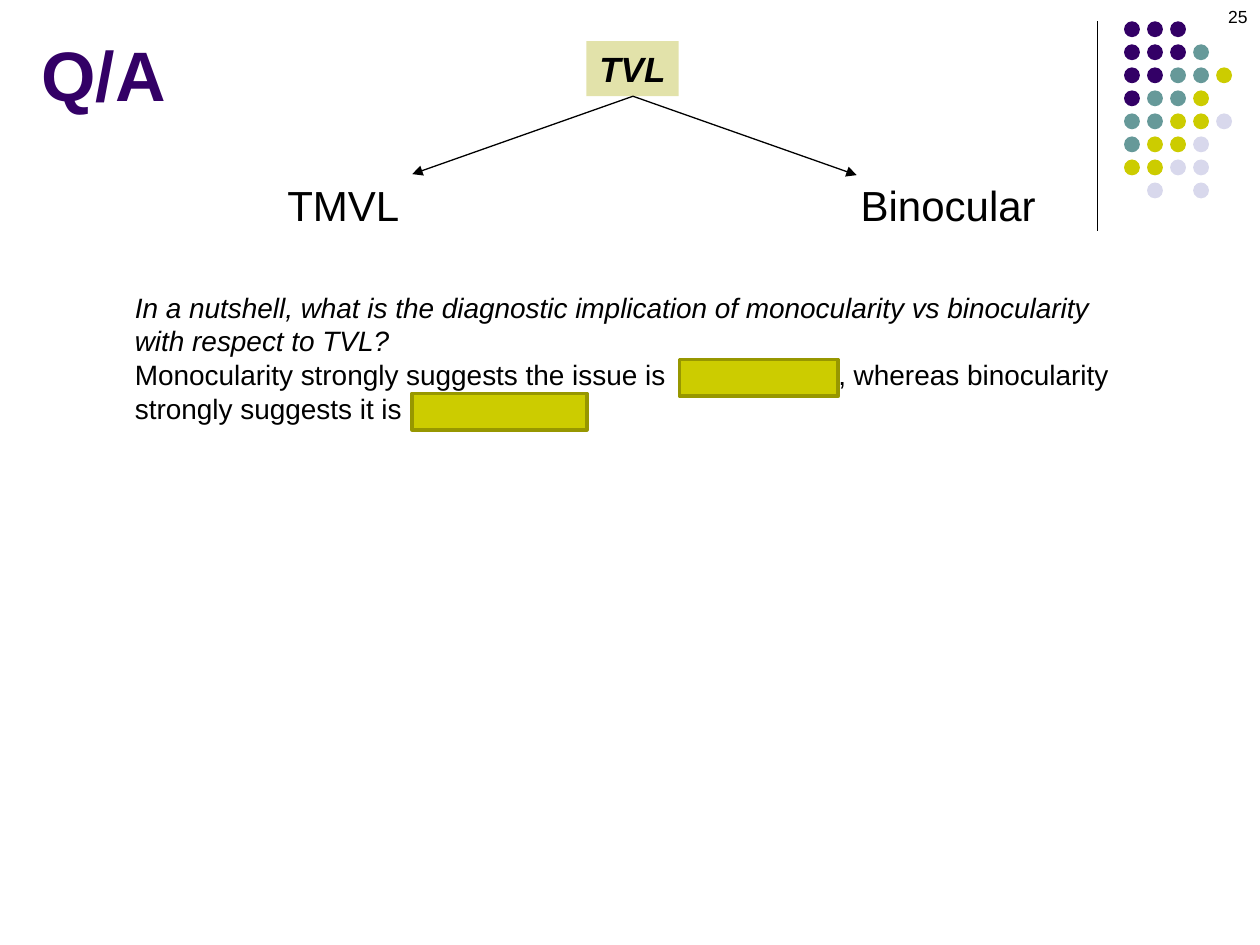
import pptx
import pptx.util
import pptx.dml.color
import pptx.enum.shapes
import pptx.enum.text
import pptx.oxml.ns
import lxml.etree

Cm = pptx.util.Cm
Pt = pptx.util.Pt
RGB = pptx.dml.color.RGBColor
SHAPE = pptx.enum.shapes.MSO_SHAPE
ALIGN = pptx.enum.text.PP_ALIGN
ANCHOR = pptx.enum.text.MSO_ANCHOR
qn = pptx.oxml.ns.qn

BLACK = RGB(0x00, 0x00, 0x00)
PLUM = RGB(0x33, 0x00, 0x66)
TEAL = RGB(0x66, 0x99, 0x99)
LIME = RGB(0xCC, 0xCC, 0x00)
OLIVE = RGB(0x97, 0x97, 0x00)
MIST = RGB(0xD8, 0xD8, 0xEC)
CREAM = RGB(0xE2, 0xE2, 0xAA)

# Content: all places are left, top, width, height in cm
TITLE = ("Q/A", (0.58, 0.51, 3.05, 1.96))
ROOT = ("TVL", (11.82, 0.83, 1.86, 1.11))
LABELS = [
    ("25", (19.48, 0, 5.92, 1.27), 10, ALIGN.RIGHT),
    ("TMVL", (5.51, 3.5, 2.79, 1.27), 24, ALIGN.RIGHT),
    ("Binocular", (17.1, 3.5, 4.09, 1.27), 24, ALIGN.LEFT),
]
QUERY = ("In a nutshell, what is the diagnostic implication of "
         "monocularity vs binocularity with respect to TVL?")
REPLY = ("Monocularity strongly suggests the issue is\t, "
         "whereas binocularity strongly suggests it is")
BODY = (2.47, 5.73, 20.57, 3.0)
BLANKS = [(13.7, 7.25, 3.2, 0.74), (8.31, 7.93, 3.52, 0.74)]
TAB = 14.18  # from the text edge to the comma after the first blank
FORK = (12.76, 1.94)
TIPS = [(8.31, 3.51), (17.27, 3.53)]
RULE = ((22.12, 0.43), (22.12, 4.65))

# Dot grid: one letter per dot, a blank leaves a gap
HUES = {"P": PLUM, "T": TEAL, "L": LIME, "M": MIST}
DOTS = ["PPP", "PPPT", "PPTTL", "PTTL", "TTLLM", "TLLM", "LLMM", " M M"]
START = (22.66, 0.43)
STEP = 3.25 / 7
SIZE = 0.32


def write(frame, lines, size, align=ALIGN.LEFT, color=BLACK, wrap=False):
    """Fill a frame with (text, bold, italic) lines."""
    frame.word_wrap = wrap
    frame.vertical_anchor = ANCHOR.TOP
    for i, (text, bold, slant) in enumerate(lines):
        para = frame.add_paragraph() if i else frame.paragraphs[0]
        para.text = text
        para.alignment = align
        font = para.font
        font.name, font.size = "Arial", Pt(size)
        font.bold, font.italic = bold, slant
        font.color.rgb = color


def draw(slide, kind, place, fill, edge=None):
    shape = slide.shapes.add_shape(kind, *map(Cm, place))
    shape.shadow.inherit = False
    shape.fill.solid()
    shape.fill.fore_color.rgb = fill
    if edge is None:
        shape.line.fill.background()
    else:
        shape.line.color.rgb = edge
        shape.line.width = Pt(2)
    return shape


def link(slide, start, end, head=False):
    line = slide.shapes.add_connector(
        pptx.enum.shapes.MSO_CONNECTOR.STRAIGHT, *map(Cm, start + end))
    line.line.color.rgb = BLACK
    line.line.width = Pt(0.75)
    if head:
        lxml.etree.SubElement(
            line.line._get_or_add_ln(), qn("a:tailEnd"), type="triangle")
    lxml.etree.SubElement(line._element.spPr, qn("a:effectLst"))


def set_tab(para, pos):
    """Put one left tab stop on a paragraph."""
    tabs = lxml.etree.Element(qn("a:tabLst"))
    lxml.etree.SubElement(tabs, qn("a:tab"), pos=str(Cm(pos)), algn="l")
    para._p.get_or_add_pPr().insert(0, tabs)


def main():
    deck = pptx.Presentation()
    deck.slide_width, deck.slide_height = Cm(25.4), Cm(19.05)
    slide = deck.slides.add_slide(deck.slide_layouts[5])

    # Corner rule and dots
    link(slide, *RULE)
    for row, marks in enumerate(DOTS):
        for col, mark in enumerate(marks):
            if mark in HUES:
                place = (START[0] + col * STEP, START[1] + row * STEP,
                         SIZE, SIZE)
                draw(slide, SHAPE.OVAL, place, HUES[mark])

    # Title
    text, place = TITLE
    title = slide.shapes.title
    title.left, title.top, title.width, title.height = map(Cm, place)
    write(title.text_frame, [(text, True, False)], 40, color=PLUM)

    # Tree: root, arrows and labels
    text, place = ROOT
    root = draw(slide, SHAPE.RECTANGLE, place, CREAM)
    write(root.text_frame, [(text, True, True)], 20, ALIGN.CENTER)
    for tip in TIPS:
        link(slide, FORK, tip, head=True)
    for text, place, size, align in LABELS:
        box = slide.shapes.add_textbox(*map(Cm, place))
        write(box.text_frame, [(text, False, False)], size, align)

    # Question, and answer with blanks
    box = slide.shapes.add_textbox(*map(Cm, BODY))
    write(box.text_frame, [(QUERY, False, True), (REPLY, False, False)],
          16, wrap=True)
    set_tab(box.text_frame.paragraphs[1], TAB)
    for place in BLANKS:
        draw(slide, SHAPE.RECTANGLE, place, LIME, OLIVE)

    deck.save("out.pptx")


if __name__ == "__main__":
    main()
